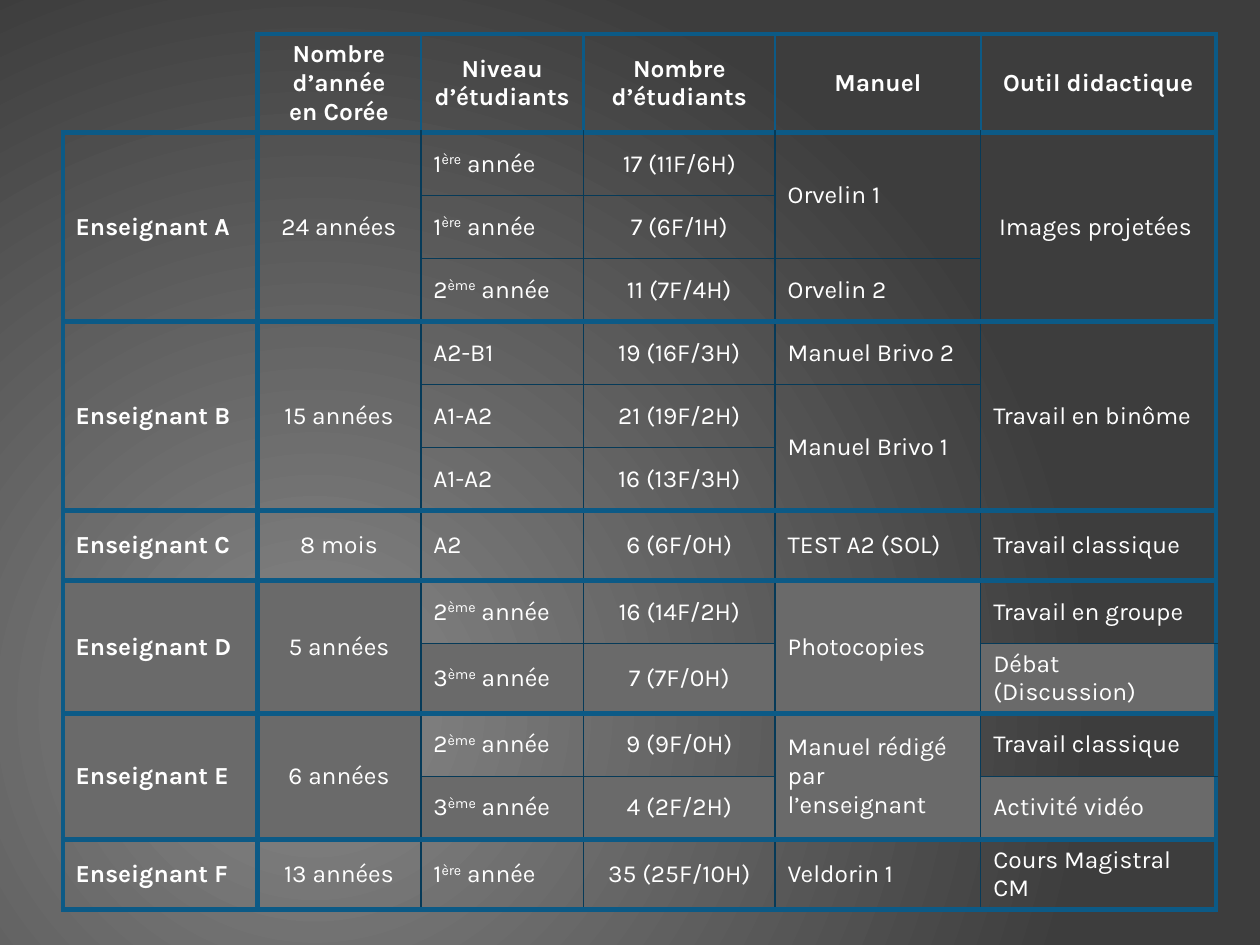
from dataclasses import dataclass, field

from lxml import etree
from pptx import Presentation
from pptx.dml.color import RGBColor as RGB
from pptx.enum.text import MSO_ANCHOR as ANCHOR, PP_ALIGN as ALIGN
from pptx.oxml.ns import qn
from pptx.util import Pt

COLORS = {"text": "FFFFFF", "strong": "0C5A86", "thin": "063A58", "gray": "6A6A6A",
          "center": "878787", "edge": "3D3D3D"}
NO_STYLE = "{2D5ABB26-0587-4C30-8999-92F81FD0307C}"
THICK, MEDIUM, THIN = ("strong", 3), ("strong", 1.5), ("thin", 1)

COL_WIDTHS = [111, 93.5, 93, 109.5, 117.5, 134.5]
ROW_HEIGHTS = [56] + [36] * 6 + [40] + [36] * 4 + [40]

HEADER = [[None, "Nombre d’année\nen Corée", "Niveau d’étudiants", "Nombre d’étudiants",
           "Manuel", "Outil didactique"]]
TEACHERS = [
    [["Enseignant A", "24 années", "1^ère^ année", "17 (11F/6H)", "Orvelin 1", " Images projetées"],
     [None, None, "1^ère^ année", "7 (6F/1H)", None, None],
     [None, None, "2^ème^ année", "11 (7F/4H)", "Orvelin 2", None]],
    [["Enseignant B", "15 années", "A2-B1", "19 (16F/3H)", "Manuel Brivo 2", "Travail en binôme"],
     [None, None, "A1-A2", "21 (19F/2H)", "Manuel Brivo 1", None],
     [None, None, "A1-A2", "16 (13F/3H)", None, None]],
    [["Enseignant C", "8 mois", "A2", "6 (6F/0H)", "TEST A2 (SOL)", "Travail classique"]],
    [["Enseignant D", "5 années", "2^ème^ année", "16 (14F/2H)", "Photocopies", "Travail en groupe"],
     [None, None, "3^ème^ année", "7 (7F/0H)", None, "Débat (Discussion)"]],
    [["Enseignant E", "6 années", "2^ème^ année", "9 (9F/0H)", "Manuel rédigé par l’enseignant",
      "Travail classique"],
     [None, None, "3^ème^ année", "4 (2F/2H)", None, "Activité vidéo"]],
    [["Enseignant F", "13 années", "1^ère^ année", "35 (25F/10H)", "Veldorin 1", "Cours Magistral CM"]],
]
GRAY_TEACHERS = {"Enseignant D", "Enseignant E"}
CENTERED_COLS = {1, 3}


@dataclass
class Deck:
    """Hold the slide style and draw the background and the table."""
    font: str = "Karla"
    size: float = 14
    prs: object = field(default_factory=Presentation)
    s: object = None

    def add_slide(self, width, height):
        self.prs.slide_width, self.prs.slide_height = Pt(width), Pt(height)
        self.s = self.prs.slides.add_slide(self.prs.slide_layouts[6])

    def background(self, inner, outer, focus):
        fill = self.s.background.fill
        fill.gradient()
        for stop, color in zip(fill.gradient_stops, (inner, outer)):
            stop.color.rgb = RGB.from_string(COLORS[color])
        grad = self.s.element.find(".//" + qn("a:gradFill"))
        grad.remove(grad.find(qn("a:lin")))
        path = etree.SubElement(grad, qn("a:path"), {"path": "circle"})
        etree.SubElement(path, qn("a:fillToRect"),
                         {side: str(pct * 1000) for side, pct in zip("ltrb", focus)})

    def table(self, left, top, widths, heights):
        frame = self.s.shapes.add_table(len(heights), len(widths), Pt(left), Pt(top),
                                        Pt(sum(widths)), Pt(sum(heights)))
        tbl = frame.table
        tbl.first_row = tbl.horz_banding = False
        frame.element.find(".//" + qn("a:tableStyleId")).text = NO_STYLE
        for col, width in zip(tbl.columns, widths):
            col.width = Pt(width)
        for row, height in zip(tbl.rows, heights):
            row.height = Pt(height)
        return tbl

    def text(self, cell, text, bold, centered):
        cell.vertical_anchor = ANCHOR.MIDDLE
        tf = cell.text_frame
        for i, line in enumerate(text.split("\n")):
            p = tf.add_paragraph() if i else tf.paragraphs[0]
            p.alignment = ALIGN.CENTER if centered else ALIGN.LEFT
            p.font.name, p.font.size, p.font.bold = self.font, Pt(self.size), bold
            p.font.color.rgb = RGB.from_string(COLORS["text"])
            for j, part in enumerate(line.split("^")):
                r = p.add_run()
                r.text = part
                if j % 2:
                    r._r.get_or_add_rPr().set("baseline", "30000")

    def box(self, cell, fill, borders):
        if fill:
            cell.fill.solid()
            cell.fill.fore_color.rgb = RGB.from_string(COLORS[fill])
        else:
            cell.fill.background()
        props = cell._tc.get_or_add_tcPr()
        sides = [(side, borders[side]) for side in "LRTB" if side in borders]
        for i, (side, (color, width)) in enumerate(sides):
            ln = etree.Element(qn("a:ln" + side), {"w": str(Pt(width))})
            solid = etree.SubElement(ln, qn("a:solidFill"))
            etree.SubElement(solid, qn("a:srgbClr"), {"val": COLORS[color]})
            props.insert(i, ln)

    def group(self, tbl, start, rows, header=False):
        end, last_col = len(rows) - 1, len(rows[0]) - 1
        inner = MEDIUM if header else THIN
        for c, column in enumerate(zip(*rows)):
            firsts = [i for i, text in enumerate(column) if text or i == 0]
            for first, after in zip(firsts, firsts[1:] + [end + 1]):
                last = after - 1
                borders = {"L": THICK if c < 2 else inner,
                           "R": THICK if c in (0, last_col) else inner,
                           "T": THICK if first == 0 else THIN,
                           "B": THICK if last == end else THIN}
                if not column[first]:
                    borders = {side: THICK for side in "RB"}
                gray = rows[0][0] in GRAY_TEACHERS and last == end
                for i in range(first, after):
                    self.box(tbl.cell(start + i, c), "gray" if gray else None, borders)
                cell = tbl.cell(start + first, c)
                if last > first:
                    cell.merge(tbl.cell(start + last, c))
                if column[first]:
                    self.text(cell, column[first], header or c == 0, header or c in CENTERED_COLS)


def main():
    deck = Deck()
    deck.add_slide(720, 540)
    deck.background("center", "edge", (50, 100, 100, 50))
    tbl = deck.table(36, 19.5, COL_WIDTHS, ROW_HEIGHTS)
    deck.group(tbl, 0, HEADER, header=True)
    start = 1
    for rows in TEACHERS:
        deck.group(tbl, start, rows)
        start += len(rows)
    deck.prs.save("out.pptx")


if __name__ == "__main__":
    main()
